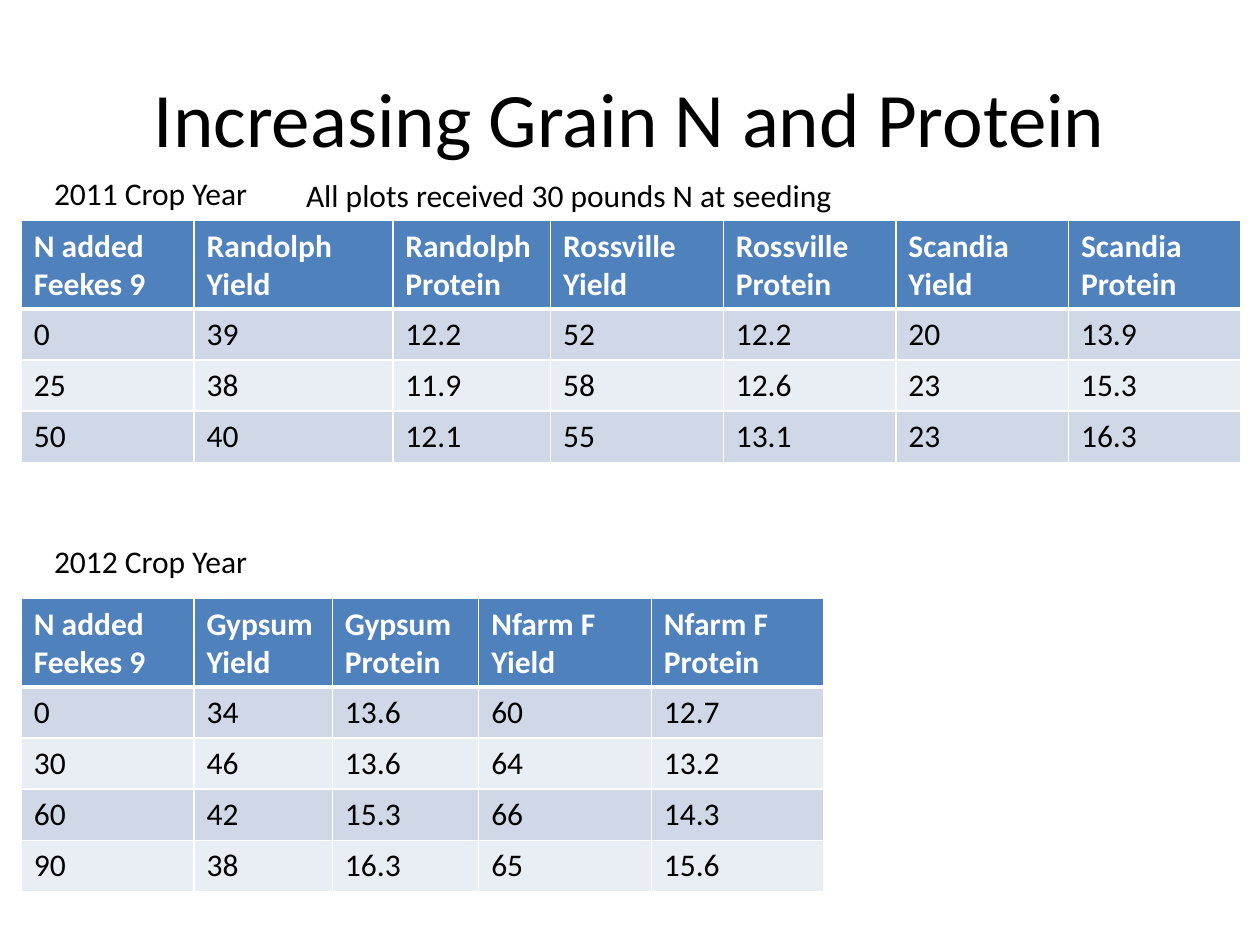
from lxml.etree import SubElement
from pptx import Presentation
from pptx.dml.color import RGBColor
from pptx.enum.text import MSO_ANCHOR, PP_ALIGN
from pptx.oxml import parse_xml
from pptx.oxml.ns import nsdecls
from pptx.util import Cm, Pt

FONT = "Calibri"
BLACK = RGBColor(0x00, 0x00, 0x00)
WHITE = RGBColor(0xFF, 0xFF, 0xFF)
HEADER_BLUE = RGBColor(0x4F, 0x81, 0xBD)
BANDS = (RGBColor(0xD0, 0xD8, 0xE8), RGBColor(0xE9, 0xED, 0xF4))

TITLE = "Increasing Grain N and Protein"
# text, left, top, width, wraps
LABELS = [
    ("2011 Crop Year", 0.84, 3.38, 7.42, True),
    ("All plots received 30 pounds N at seeding", 5.92, 3.43, 11.25, False),
    ("2012 Crop Year", 0.84, 10.8, 4.65, True),
]
# Each header cell is a list of its paragraphs.
TABLES = [
    {
        "top": 4.45,
        "widths": [3.48, 4.01, 3.18, 3.48, 3.48, 3.48, 3.48],
        "header": [["N added", "Feekes 9"], ["Randolph", "Yield"], ["Randolph", "Protein"],
                   ["Rossville", "Yield"], ["Rossville", "Protein"],
                   ["Scandia", "Yield"], ["Scandia Protein"]],
        "rows": [
            ["0", "39", "12.2", "52", "12.2", "20", "13.9"],
            ["25", "38", "11.9", "58", "12.6", "23", "15.3"],
            ["50", "40", "12.1", "55", "13.1", "23", "16.3"],
        ],
    },
    {
        "top": 12.07,
        "widths": [3.48, 2.79, 2.95, 3.48, 3.48],
        "header": [["N added", "Feekes 9"], ["Gypsum", "Yield"], ["Gypsum", "Protein"],
                   ["Nfarm F", "Yield"], ["Nfarm F", "Protein"]],
        "rows": [
            ["0", "34", "13.6", "60", "12.7"],
            ["30", "46", "13.6", "64", "13.2"],
            ["60", "42", "15.3", "66", "14.3"],
            ["90", "38", "16.3", "65", "15.6"],
        ],
    },
]
TABLE_LEFT = 0.43
HEADER_HEIGHT = 1.78
ROW_HEIGHT = 1.03


def write(text_frame, lines, size=18, color=BLACK, bold=False, align=PP_ALIGN.LEFT):
    for index, line in enumerate(lines):
        paragraph = text_frame.add_paragraph() if index else text_frame.paragraphs[0]
        paragraph.alignment = align
        run = paragraph.add_run()
        run.text = line
        run.font.name = FONT
        run.font.size = Pt(size)
        run.font.bold = bold
        run.font.color.rgb = color


def add_text(slide, text, left, top, width, height, wraps=True, **style):
    text_frame = slide.shapes.add_textbox(Cm(left), Cm(top), Cm(width), Cm(height)).text_frame
    text_frame.word_wrap = wraps
    write(text_frame, [text], **style)
    return text_frame


def set_borders(cell, top, bottom):
    """Give the cell white borders, 1 pt at the sides."""
    properties = cell._tc.get_or_add_tcPr()
    widths = {"lnL": 1, "lnR": 1, "lnT": top, "lnB": bottom}
    for index, (side, width) in enumerate(widths.items()):
        line = parse_xml(f'<a:{side} {nsdecls("a")} w="{Pt(width)}"/>')
        fill = SubElement(line, f"{{{line.nsmap['a']}}}solidFill")
        SubElement(fill, f"{{{line.nsmap['a']}}}srgbClr", val=str(WHITE))
        properties.insert(index, line)


def add_crop_table(slide, top, widths, header, rows):
    height = HEADER_HEIGHT + ROW_HEIGHT * len(rows)
    table = slide.shapes.add_table(len(rows) + 1, len(widths), Cm(TABLE_LEFT), Cm(top),
                                   Cm(sum(widths)), Cm(height)).table
    for column, width in zip(table.columns, widths):
        column.width = Cm(width)
    all_rows = [header] + [[[value] for value in row] for row in rows]
    for row_index, row in enumerate(all_rows):
        is_header = row_index == 0
        table.rows[row_index].height = Cm(HEADER_HEIGHT if is_header else ROW_HEIGHT)
        for column_index, lines in enumerate(row):
            cell = table.cell(row_index, column_index)
            cell.fill.solid()
            cell.fill.fore_color.rgb = HEADER_BLUE if is_header else BANDS[(row_index - 1) % 2]
            set_borders(cell, top=3 if row_index == 1 else 1, bottom=3 if is_header else 1)
            write(cell.text_frame, lines, color=WHITE if is_header else BLACK, bold=is_header)


def main():
    presentation = Presentation()
    presentation.slide_width = Cm(25.4)
    presentation.slide_height = Cm(19.05)
    slide = presentation.slides.add_slide(presentation.slide_layouts[6])

    title = add_text(slide, TITLE, 1.27, 0.76, 22.86, 3.18, size=44, align=PP_ALIGN.CENTER)
    title.vertical_anchor = MSO_ANCHOR.MIDDLE
    for crop_table in TABLES:
        add_crop_table(slide, **crop_table)
    for text, left, top, width, wraps in LABELS:
        add_text(slide, text, left, top, width, 1.02, wraps)

    presentation.save("out.pptx")


if __name__ == "__main__":
    main()
